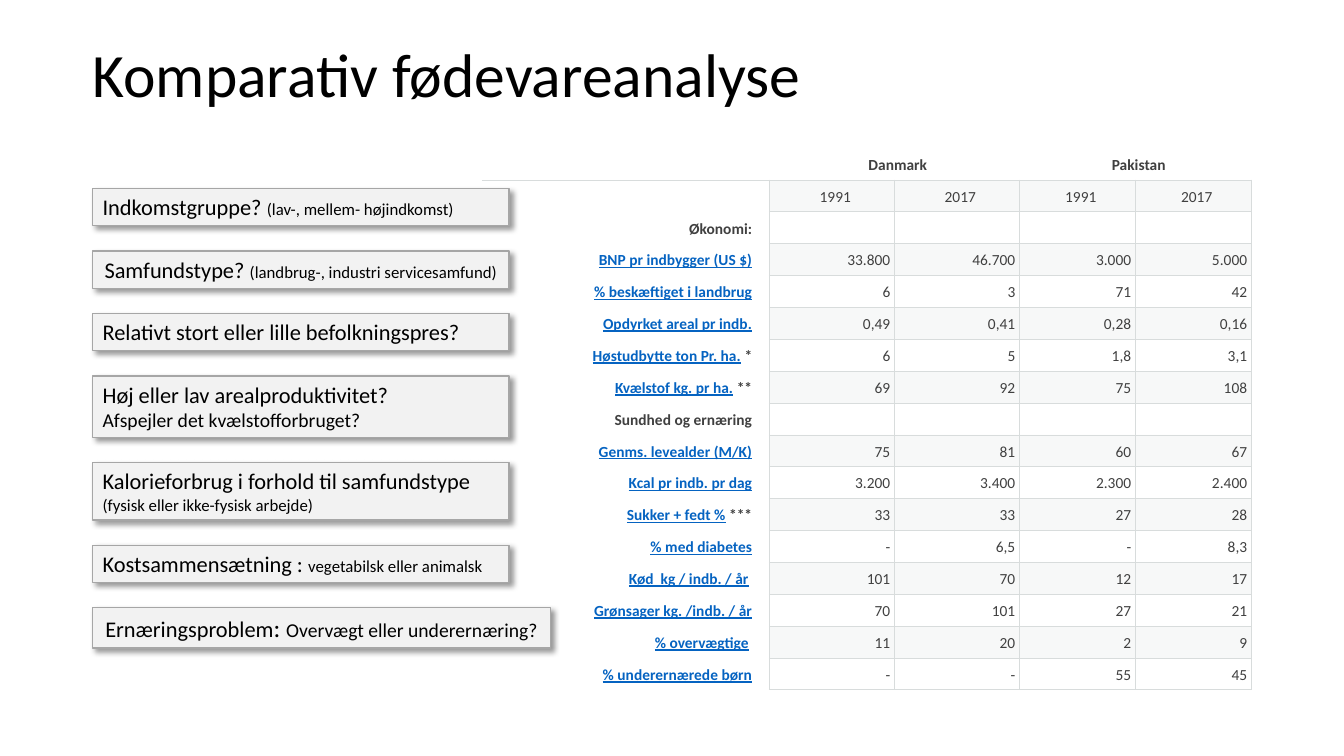
"""Build the slide comparing food and nutrition figures for Denmark and Pakistan."""
from dataclasses import dataclass

import lxml.etree
import pptx
import pptx.dml.color
import pptx.enum.shapes
import pptx.enum.text
import pptx.oxml.ns
import pptx.util

TITLE = "Komparativ fødevareanalyse"
COUNTRIES = ("Danmark", "Pakistan")
YEARS = ("1991", "2017", "1991", "2017")
SECTIONS = [
    ("Økonomi:", [
        ("BNP pr indbygger (US $)", "", ("33.800", "46.700", "3.000", "5.000")),
        ("% beskæftiget i landbrug", "", ("6", "3", "71", "42")),
        ("Opdyrket areal pr indb.", "", ("0,49", "0,41", "0,28", "0,16")),
        ("Høstudbytte ton Pr. ha.", " *", ("6", "5", "1,8", "3,1")),
        ("Kvælstof kg. pr ha.", " **", ("69", "92", "75", "108")),
    ]),
    ("Sundhed og ernæring", [
        ("Genms. levealder (M/K)", "", ("75", "81", "60", "67")),
        ("Kcal pr indb. pr dag", "", ("3.200", "3.400", "2.300", "2.400")),
        ("Sukker + fedt %", " ***", ("33", "33", "27", "28")),
        ("% med diabetes", "", ("-", "6,5", "-", "8,3")),
        ("Kød  kg / indb. / år", " ", ("101", "70", "12", "17")),
        ("Grønsager kg. /indb. / år", "", ("70", "101", "27", "21")),
        ("% overvægtige", " ", ("11", "20", "2", "9")),
        ("% underernærede børn", "", ("-", "-", "55", "45")),
    ]),
]
QUESTIONS = [
    (0.37, 4.13, "left", [("Indkomstgruppe? ", 16), ("(lav-, mellem- højindkomst)", 12)]),
    (0.37, 4.13, "center", [("Samfundstype? ", 16), ("(landbrug-, industri servicesamfund)", 12)]),
    (0.37, 4.13, "left", [("Relativt stort eller lille befolkningspres?", 16)]),
    (0.61, 4.13, "left", [("Høj eller lav arealproduktivitet?\n", 16), ("Afspejler det kvælstofforbruget?", 14)]),
    (0.57, 4.13, "left", [("Kalorieforbrug i forhold til samfundstype\n", 16), ("(fysisk eller ikke-fysisk arbejde)", 12)]),
    (0.37, 4.13, "left", [("Kostsammensætning : ", 16), ("vegetabilsk eller animalsk", 12)]),
    (0.4, 4.54, "center", [("Ernæringsproblem", 16), (": ", 18), ("Overvægt eller underernæring?", 14)]),
]
TABLE_LEFT, TABLE_TOP, ROW_HEIGHT = 4.78, 1.47, 0.3
COLUMN_WIDTHS = (2.85, 1.24, 1.24, 1.15, 1.15)
QUESTION_LEFT, QUESTION_TOP, QUESTION_GAP = 0.92, 1.87, 0.25
PLAIN_TABLE_STYLE = "{2D5ABB26-0587-4C30-8999-92F81FD0307C}"


@dataclass(frozen=True)
class Theme:
    """Colours, font and type sizes of the slide."""
    font: str = "Calibri"
    black: str = "000000"
    body: str = "404040"
    link: str = "0563C1"
    grid: str = "D8DCDC"
    band: str = "D8DEDC"
    box: str = "F2F2F2"
    box_line: str = "A6A6A6"
    title_size: int = 44
    table_size: int = 11


THEME = Theme()
ALIGN = {
    "left": pptx.enum.text.PP_ALIGN.LEFT,
    "center": pptx.enum.text.PP_ALIGN.CENTER,
    "right": pptx.enum.text.PP_ALIGN.RIGHT,
}
inches = pptx.util.Inches


def rgb(value):
    return pptx.dml.color.RGBColor.from_string(value)


def add_child(parent, tag, **attributes):
    child = lxml.etree.SubElement(parent, pptx.oxml.ns.qn(tag))
    for name, value in attributes.items():
        child.set(name, str(value))
    return child


def add_run(paragraph, text, size, color, **formats):
    run = paragraph.add_run()
    run.text = text.rstrip("\n")
    for name, value in {"name": THEME.font, "size": pptx.util.Pt(size), **formats}.items():
        setattr(run.font, name, value)
    run.font.color.rgb = rgb(color)
    if text.endswith("\n"):
        paragraph.add_line_break()


def add_title(slide):
    box = slide.shapes.add_textbox(inches(0.82), inches(0.04), inches(11.5), inches(1.45))
    box.text_frame.word_wrap = True
    box.text_frame.vertical_anchor = pptx.enum.text.MSO_ANCHOR.MIDDLE
    paragraph = box.text_frame.paragraphs[0]
    paragraph.line_spacing = 0.9
    add_run(paragraph, TITLE, THEME.title_size, THEME.black)


def fill_cell(cell, runs, align, right_margin, banded, sides):
    margins = {"margin_left": 0.11, "margin_right": right_margin, "margin_top": 0.06, "margin_bottom": 0.06}
    for name, value in margins.items():
        setattr(cell, name, inches(value))
    paragraph = cell.text_frame.paragraphs[0]
    paragraph.alignment = ALIGN[align]
    paragraph.line_spacing = 1.07
    for text, color, formats in runs:
        add_run(paragraph, text, THEME.table_size, color, **formats)
    if not runs:
        add_child(paragraph._p, "a:endParaRPr", sz=THEME.table_size * 100)

    properties = cell._tc.get_or_add_tcPr()
    for side in "LRTB":
        line = add_child(properties, f"a:ln{side}", w=pptx.util.Pt(0.75))
        if side in sides:
            add_child(add_child(line, "a:solidFill"), "a:srgbClr", val=THEME.grid)
        else:
            add_child(line, "a:noFill")
    if banded:
        color = add_child(add_child(properties, "a:solidFill"), "a:srgbClr", val=THEME.band)
        add_child(color, "a:alpha", val=20000)
    else:
        add_child(properties, "a:noFill")


def table_rows():
    bold = {"bold": True}
    rows = [
        ([], [country for name in COUNTRIES for country in (name, "")], "center"),
        ([], YEARS, "center"),
    ]
    for heading, entries in SECTIONS:
        rows.append(([(heading, THEME.body, bold)], ("",) * len(YEARS), "right"))
        for label, mark, values in entries:
            runs = [(label, THEME.link, {"bold": True, "underline": True})]
            if mark:
                runs.append((mark, THEME.body, bold))
            rows.append((runs, values, "right"))
    return rows


def add_figures_table(slide):
    rows = table_rows()
    frame = slide.shapes.add_table(
        len(rows), len(COLUMN_WIDTHS), inches(TABLE_LEFT), inches(TABLE_TOP),
        inches(sum(COLUMN_WIDTHS)), inches(ROW_HEIGHT * len(rows)))
    table = frame.table
    table.first_row = table.horz_banding = False
    table._tbl.tblPr.find(pptx.oxml.ns.qn("a:tableStyleId")).text = PLAIN_TABLE_STYLE
    for column, width in zip(table.columns, COLUMN_WIDTHS):
        column.width = inches(width)
    for index, (label_runs, values, align) in enumerate(rows):
        header = index == 0
        table.rows[index].height = inches(ROW_HEIGHT)
        label_sides = "B" if header else "TR" if index == 1 else "R"
        fill_cell(table.cell(index, 0), label_runs, "right", 0.17, False, label_sides)
        for position, value in enumerate(values, 1):
            runs = [(value, THEME.body, {"bold": header})] if value else []
            fill_cell(table.cell(index, position), runs, align, 0.04,
                      index % 2 == 1, "B" if header else "LRTB")
    for first in (1, 3):
        table.cell(0, first).merge(table.cell(0, first + 1))


def add_shadow(shape):
    shape.shadow.inherit = False
    effects = shape._element.spPr.find(pptx.oxml.ns.qn("a:effectLst"))
    shadow = add_child(effects, "a:outerShdw", blurRad=pptx.util.Pt(4), dist=pptx.util.Pt(3),
                       dir=45 * 60000, algn="tl", rotWithShape=0)
    add_child(add_child(shadow, "a:srgbClr", val=THEME.black), "a:alpha", val=40000)


def add_questions(slide):
    top = QUESTION_TOP
    for height, width, align, runs in QUESTIONS:
        shape = slide.shapes.add_shape(
            pptx.enum.shapes.MSO_SHAPE.RECTANGLE,
            inches(QUESTION_LEFT), inches(top), inches(width), inches(height))
        shape.fill.solid()
        shape.fill.fore_color.rgb = rgb(THEME.box)
        shape.line.color.rgb = rgb(THEME.box_line)
        shape.line.width = pptx.util.Pt(1)
        add_shadow(shape)
        shape.text_frame.word_wrap = align == "left"
        shape.text_frame.vertical_anchor = pptx.enum.text.MSO_ANCHOR.TOP
        paragraph = shape.text_frame.paragraphs[0]
        paragraph.alignment = ALIGN[align]
        for text, size in runs:
            add_run(paragraph, text, size, THEME.black)
        top += height + QUESTION_GAP


def main():
    presentation = pptx.Presentation()
    presentation.slide_width, presentation.slide_height = inches(13.33), inches(7.5)
    slide = presentation.slides.add_slide(presentation.slide_layouts[6])
    add_title(slide)
    add_figures_table(slide)
    add_questions(slide)
    presentation.save("out.pptx")


if __name__ == "__main__":
    main()
